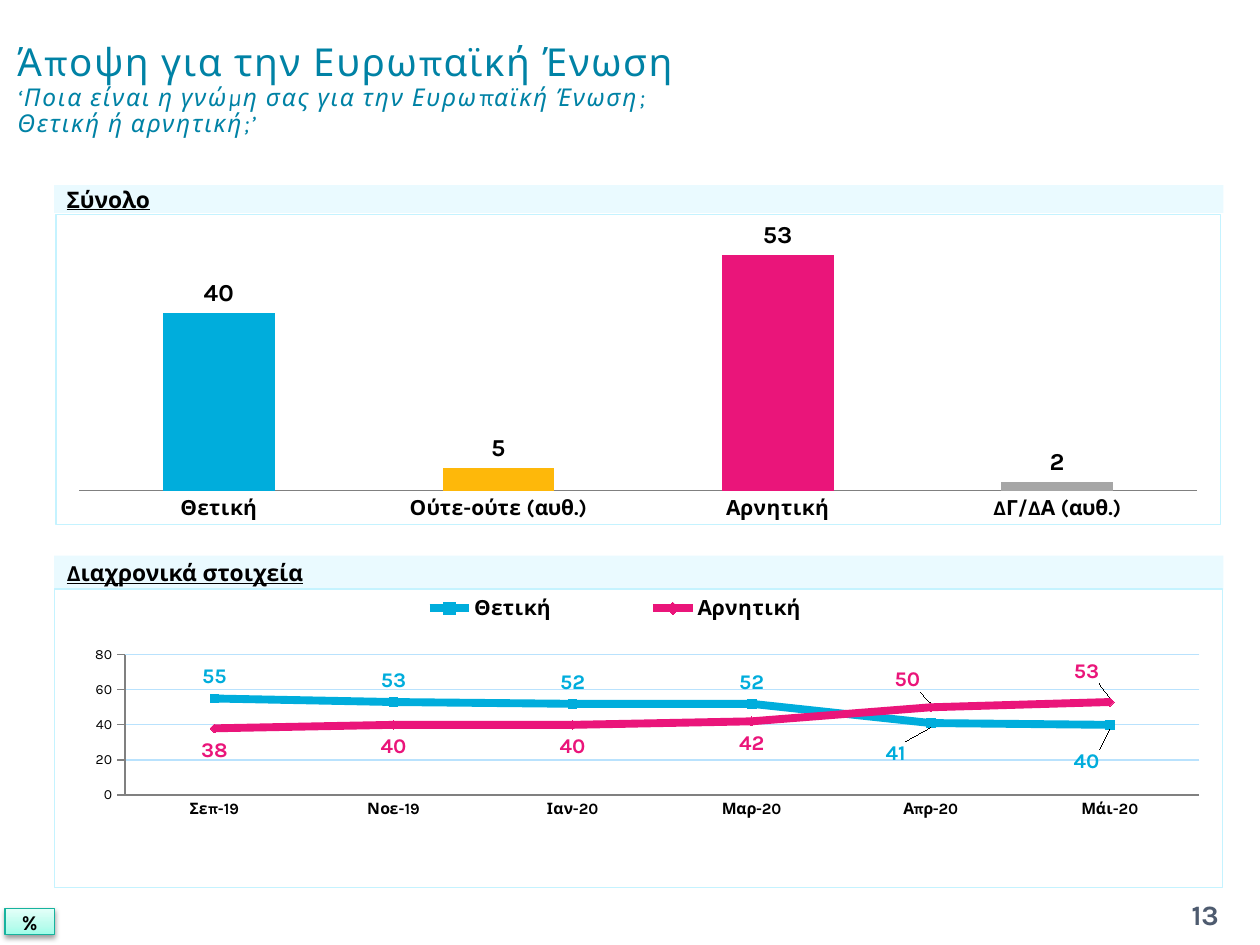
from lxml import etree
from pptx import Presentation
from pptx.chart.data import CategoryChartData as Data
from pptx.dml.color import RGBColor
from pptx.enum.chart import XL_CHART_TYPE as Kind, XL_LABEL_POSITION as Pos
from pptx.enum.chart import XL_LEGEND_POSITION as Side, XL_TICK_MARK as Tick
from pptx.enum.shapes import MSO_SHAPE as Shape
from pptx.enum.text import MSO_ANCHOR as Anchor, PP_ALIGN as Align
from pptx.oxml import parse_xml
from pptx.util import Inches, Pt

A = "http://schemas.openxmlformats.org/drawingml/2006/main"
C = "http://schemas.openxmlformats.org/drawingml/2006/chart"
BLUE, PINK, PALE, GRAY = "00ADDC", "EA157A", "C5F3FF", "808080"
hue = RGBColor.from_string


def style(font, size, color="000000", bold=True):
    font.name, font.size, font.bold = "Karla", Pt(size), bold
    font.color.rgb = hue(color)


def layout(inner=False, **part):
    """Manual chart layout from fractions of the chart's size."""
    target = '<c:layoutTarget val="inner"/>' if inner else ""
    modes = "".join(f'<c:{k}Mode val="edge"/>' for k in "xy" if "w" in part)
    vals = "".join(f'<c:{k} val="{v}"/>' for k, v in part.items())
    return parse_xml(f'<c:layout xmlns:c="{C}"><c:manualLayout>{target}{modes}'
                     f'{vals}</c:manualLayout></c:layout>')


deck = Presentation()
deck.slide_width, deck.slide_height = Inches(10), Inches(7.5)
slide = deck.slides.add_slide(deck.slide_layouts[6])
shapes = slide.shapes

# Title and question
box = shapes.add_textbox(Inches(0.04), Inches(0.13), Inches(6.85), Inches(1.18))
frame = box.text_frame
frame.word_wrap, frame.vertical_anchor = True, Anchor.MIDDLE
lines = [("Άποψη για την Ευρωπαϊκή Ένωση", 22, False),
         ("‘Ποια είναι η γνώμη σας για την Ευρωπαϊκή Ένωση;\vΘετική ή αρνητική;’", 14, True)]
for i, (text, size, slant) in enumerate(lines):
    para = frame.add_paragraph() if i else frame.paragraphs[0]
    para.text, para.line_spacing = text, 0.9
    style(para.font, size, "0082A5", False)
    para.font.italic = slant
    for run in para.runs:
        run.font.size = Pt(size)
        run.font._element.set("spc", "100")

# Section headings, underlined up to a tab stop
for text, top, high, stop in [("Σύνολο", 1.47, 0.22, 1.14),
                              ("Διαχρονικά στοιχεία", 4.41, 0.27, 2.34)]:
    band = shapes.add_shape(Shape.RECTANGLE, Inches(0.43), Inches(top), Inches(9.28), Inches(high))
    band.shadow.inherit = False
    band.fill.solid()
    band.fill.fore_color.rgb = hue(PALE)
    tint = band.fill._xPr.find(f".//{{{A}}}srgbClr")
    etree.SubElement(tint, f"{{{A}}}alpha", val="35000")
    band.line.fill.background()
    frame = band.text_frame
    frame.vertical_anchor = Anchor.MIDDLE
    para = frame.paragraphs[0]
    para.text, para.alignment = text + "\t", Align.LEFT
    tabs = etree.SubElement(para._p.get_or_add_pPr(), f"{{{A}}}tabLst")
    etree.SubElement(tabs, f"{{{A}}}tab", pos=str(Inches(stop)), algn="l")
    style(para.font, 13)
    para.font.underline = True

# Both charts: data, border, plot area and axes
bars = Data(number_format="0")
bars.categories = ["Θετική", "Ούτε-ούτε (αυθ.)", "Αρνητική", "ΔΓ/ΔΑ (αυθ.)"]
bars.add_series("Series 1", [40, 5, 53, 2])
trend = Data(number_format="0")
trend.categories = ["Σεπ-19", "Νοε-19", "Ιαν-20", "Μαρ-20", "Απρ-20", "Μάι-20"]
trend.add_series("Θετική", [55, 53, 52, 52, 41, 40])
trend.add_series("Αρνητική", [38, 40, 40, 42, 50, 53])
charts = []
for kind, data, at, plot, top, size in [
        (Kind.COLUMN_CLUSTERED, bars, (0.44, 1.7, 9.25, 2.47), (0.02, 0.03, 0.96, 0.86), 60, 12),
        (Kind.LINE, trend, (0.43, 4.67, 9.28, 2.38), (0.06, 0.22, 0.92, 0.47), 80, 9)]:
    chart = shapes.add_chart(kind, *map(Inches, at), data).chart
    charts.append(chart)
    style(chart.font, 18, bold=False)
    chart.has_title = chart.has_legend = False
    chart.plots[0].vary_by_categories = False
    space = chart._chartSpace
    space.find(f"{{{C}}}chart").addnext(parse_xml(
        f'<c:spPr xmlns:c="{C}" xmlns:a="{A}"><a:noFill/><a:ln w="9525"><a:solidFill>'
        f'<a:srgbClr val="{PALE}"/></a:solidFill></a:ln></c:spPr>'))
    area = space.find(f".//{{{C}}}plotArea")
    for old in area.findall(f"{{{C}}}layout"):
        area.remove(old)
    area.insert(0, layout(True, **dict(zip("xywh", plot))))
    cat, val = chart.category_axis, chart.value_axis
    cat.major_tick_mark = Tick.NONE
    cat.format.line.color.rgb = hue(GRAY)
    style(cat.tick_labels.font, size)
    val.minimum_scale, val.maximum_scale, val.major_unit = 0, top, 20
    val.has_major_gridlines = False

# Totals
chart = charts[0]
chart.value_axis.visible = False
plot = chart.plots[0]
plot.gap_width, plot.overlap = 150, -25
row = plot.series[0]
for i, color in enumerate([BLUE, "FEB80A", PINK, "A6A6A6"]):
    fill = row.points[i].format.fill
    fill.solid()
    fill.fore_color.rgb = hue(color)
tags = row.data_labels
tags.show_value, tags.position = True, Pos.OUTSIDE_END
style(tags.font, 14)

# Trend
chart = charts[1]
val = chart.value_axis
val.has_major_gridlines = True
val.major_gridlines.format.line.color.rgb = hue("B9E2FD")
val.major_gridlines.format.line.width = Pt(0.75)
val.major_tick_mark = Tick.OUTSIDE
val.format.line.color.rgb = hue(GRAY)
style(val.tick_labels.font, 8, bold=False)
chart.has_legend = True
key = chart.legend
key.position, key.include_in_layout = Side.TOP, False
style(key.font, 12)
key._element.find(f"{{{C}}}legendPos").addnext(layout(x=0.24, y=0.02, w=0.48, h=0.09))

# Lines cross, so the last two labels swap sides and shift a little
shifts = [{4: (-0.03, 0.03), 5: (-0.02, 0.05)}, {4: (-0.02, -0.02), 5: (-0.02, -0.03)}]
sides = [Pos.ABOVE, Pos.BELOW]
for i, (row, color) in enumerate(zip(chart.plots[0].series, [BLUE, PINK])):
    row.smooth = False
    row.marker.style = None
    row.format.line.color.rgb = hue(color)
    row.format.line.width = Pt(4.5)
    tags = row.data_labels
    tags.show_value, tags.position = True, sides[i]
    style(tags.font, 12, color)
    for n, (dx, dy) in shifts[i].items():
        tag = row.points[n].data_label
        style(tag.font, 12, color)
        tag.position = sides[1 - i]
    for node, (dx, dy) in zip(row._element.iter(f"{{{C}}}dLbl"), shifts[i].values()):
        node.insert(1, layout(x=dx, y=dy))

# Unit badge
badge = shapes.add_shape(Shape.RECTANGLE, Inches(0.04), Inches(7.21), Inches(0.39), Inches(0.21))
badge.line.color.rgb = hue("16B39E")
badge.line.width = Pt(0.75)
stops = "".join(f'<a:gs pos="{p}000"><a:srgbClr val="{c}"/></a:gs>'
                for p, c in [(0, "9DFDE8"), (35, "BBFCED"), (100, "E4FFF9")])
props = badge._element.spPr
props.find(f"{{{A}}}prstGeom").addnext(parse_xml(
    f'<a:gradFill xmlns:a="{A}"><a:gsLst>{stops}</a:gsLst><a:lin ang="16200000"/></a:gradFill>'))
props.append(parse_xml(
    f'<a:effectLst xmlns:a="{A}"><a:outerShdw blurRad="39370" dist="20320" dir="5400000">'
    '<a:srgbClr val="000000"><a:alpha val="38000"/></a:srgbClr></a:outerShdw></a:effectLst>'))

# Page number
page = shapes.add_textbox(Inches(9.17), Inches(7.06), Inches(0.79), Inches(0.4))
for item, text, size, color in [(badge, "%", 12, "000000"), (page, "13", 16, "4E5B6F")]:
    frame = item.text_frame
    frame.word_wrap, frame.vertical_anchor = True, Anchor.MIDDLE
    para = frame.paragraphs[0]
    para.text, para.alignment = text, Align.CENTER
    style(para.font, size, color)

deck.save("out.pptx")
